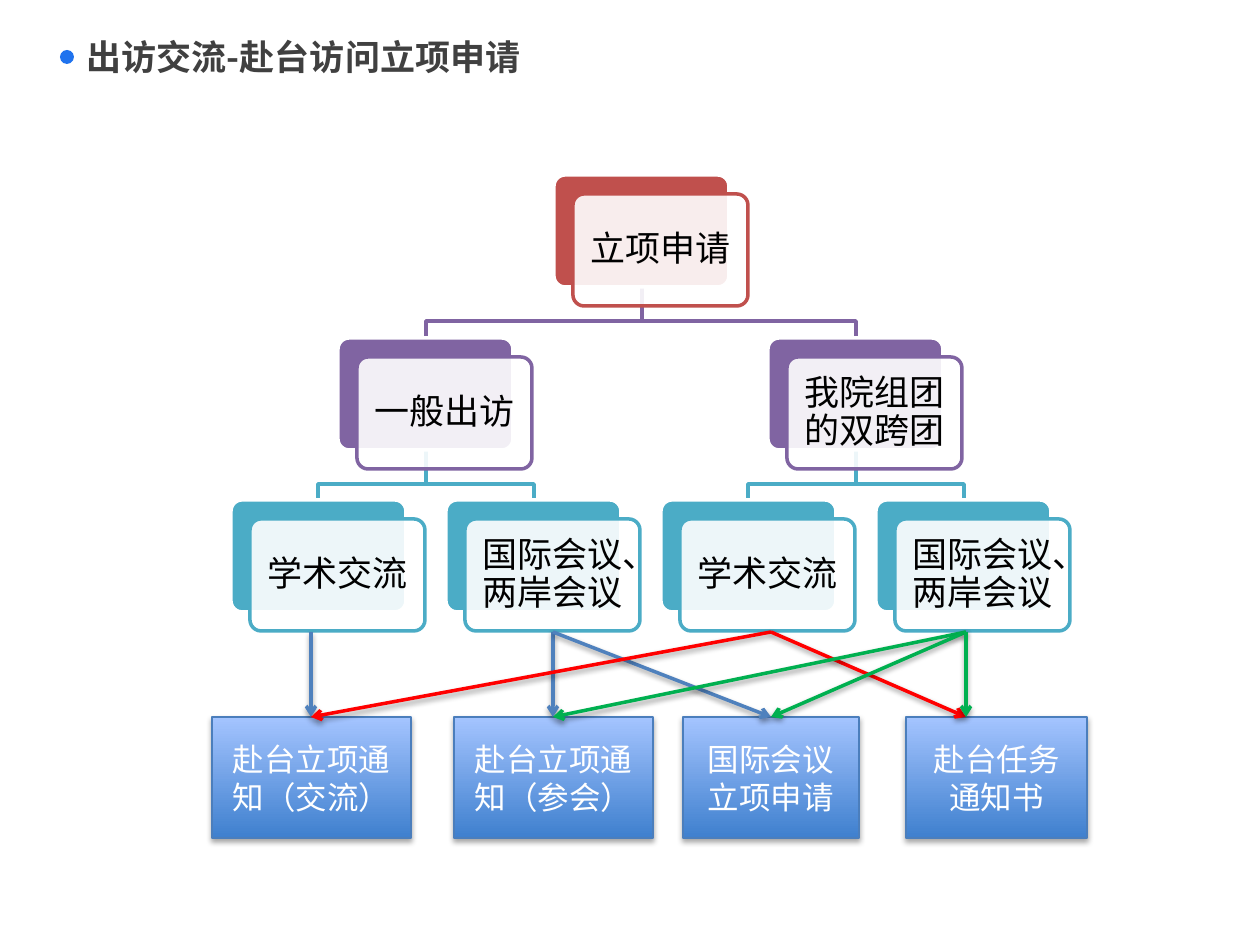
from lxml import etree
from pptx import Presentation
from pptx import util as u
from pptx.dml.color import RGBColor
from pptx.enum import shapes, text
from pptx.oxml.ns import qn

PX = 914400 / 126

WHITE = RGBColor(0xFF, 0xFF, 0xFF)
BLACK = RGBColor(0x00, 0x00, 0x00)
GREY = RGBColor(0x40, 0x40, 0x40)
DOT_BLUE = RGBColor(0x20, 0x73, 0xEE)
BRICK = RGBColor(0xC0, 0x50, 0x4D)
PURPLE = RGBColor(0x80, 0x64, 0xA2)
TEAL = RGBColor(0x4B, 0xAC, 0xC6)
BOX_DARK = RGBColor(0x3F, 0x80, 0xCE)
BOX_LIGHT = RGBColor(0xA4, 0xC4, 0xFF)
BOX_EDGE = RGBColor(0x4B, 0x7E, 0xBC)
BLUE = RGBColor(0x4F, 0x81, 0xBD)
RED = RGBColor(0xFF, 0x00, 0x00)
GREEN = RGBColor(0x00, 0xB0, 0x50)

LATIN, CJK = "Calibri", "Noto Sans CJK SC"

# Tree grid: leaf columns, one colour and one top per level
CARD_W, CARD_H, CARD_SHIFT = 175, 112, 19
FIRST_LEFT, COLUMN = 231, 215
LEVEL_TOPS = (175, 338, 500)
LEVEL_COLOURS = (BRICK, PURPLE, TEAL)

# (label, column, children)
TREE = ("立项申请", 1.5, [
    ("一般出访", 0.5, [("学术交流", 0, []), ("国际会议、两岸会议", 1, [])]),
    ("我院组团的双跨团", 2.5, [("学术交流", 2, []), ("国际会议、两岸会议", 3, [])]),
])

# (label, left, width)
DOCUMENTS = [
    ("赴台立项通知（交流）", 212, 199),
    ("赴台立项通知（参会）", 454, 199),
    ("国际会议立项申请", 683, 176),
    ("赴台任务通知书", 906, 181),
]
DOCUMENT_TOP, DOCUMENT_H = 717, 121

# Arrow columns, and (from, to, colour) between them
ARROW_X = (311, 553, 771, 966)
ARROW_TOP = 632
ARROWS = [
    (0, 0, BLUE), (1, 1, BLUE), (1, 2, BLUE),
    (2, 0, RED), (2, 3, RED),
    (3, 1, GREEN), (3, 2, GREEN), (3, 3, GREEN),
]


def px(*lengths):
    return [u.Emu(round(length * PX)) for length in lengths]


def write(frame, label, size, colour, latin=LATIN, bold=False,
          align=text.PP_ALIGN.CENTER, spacing=1.0):
    frame.word_wrap = True
    frame.vertical_anchor = text.MSO_ANCHOR.MIDDLE
    para = frame.paragraphs[0]
    para.alignment = align
    para.line_spacing = spacing
    span = para.add_run()
    span.text = label
    span.font.name = latin
    span.font.size = u.Pt(size)
    span.font.bold = bold
    span.font.color.rgb = colour
    etree.SubElement(span.font._element, qn("a:ea"), typeface=CJK)


def add_box(page, kind, left, top, width, height, fill, line=None, weight=2):
    box = page.shapes.add_shape(kind, *px(left, top, width, height))
    box.shadow.inherit = False
    if fill is not None:
        box.fill.solid()
        box.fill.fore_color.rgb = fill
    if line is None:
        box.line.fill.background()
    else:
        box.line.color.rgb = line
        box.line.width = u.Pt(weight)
    return box


def add_shadow(effects, distance, opacity):
    shadow = etree.SubElement(effects, qn("a:outerShdw"), blurRad="40000",
                              dist=str(distance), dir="5400000", rotWithShape="0")
    colour = etree.SubElement(shadow, qn("a:srgbClr"), val="000000")
    etree.SubElement(colour, qn("a:alpha"), val=str(opacity * 1000))


def add_title(page, label):
    title = page.shapes.title
    title.left, title.top, title.width, title.height = px(74, 15, 1120, 84)
    write(title.text_frame, label, 20, GREY, CJK, True, text.PP_ALIGN.LEFT)
    add_box(page, shapes.MSO_SHAPE.OVAL, 60, 50, 14, 14, DOT_BLUE)


def card_left(column):
    return round(FIRST_LEFT + COLUMN * column)


def add_branches(page, node, level=0):
    _, column, children = node
    parent_x = card_left(column) + CARD_W / 2
    bottom = LEVEL_TOPS[level] + CARD_H
    for child in children:
        add_branches(page, child, level + 1)
        child_x = card_left(child[1]) + CARD_W / 2
        builder = page.shapes.build_freeform(parent_x, bottom, scale=PX)
        builder.add_line_segments(
            [(parent_x, bottom + 34), (child_x, bottom + 34),
             (child_x, LEVEL_TOPS[level + 1])], close=False)
        branch = builder.convert_to_shape()
        branch.shadow.inherit = False
        branch.fill.background()
        branch.line.color.rgb = LEVEL_COLOURS[level + 1]
        branch.line.width = u.Pt(2)


def add_cards(page, node, level=0):
    label, column, children = node
    left, top, colour = card_left(column), LEVEL_TOPS[level], LEVEL_COLOURS[level]
    rounded = shapes.MSO_SHAPE.ROUNDED_RECTANGLE
    back = add_box(page, rounded, left, top, CARD_W, CARD_H, colour, WHITE)
    front = add_box(page, rounded, left + CARD_SHIFT, top + CARD_SHIFT,
                    CARD_W, CARD_H, WHITE, colour)
    for card in (back, front):
        card.adjustments[0] = 0.1
    white = front._element.spPr.find(qn("a:solidFill"))[0]
    etree.SubElement(white, qn("a:alpha"), val="90000")
    frame = front.text_frame
    (frame.margin_left, frame.margin_top,
     frame.margin_right, frame.margin_bottom) = px(10, 10, 10, 10)
    write(frame, label, 20, BLACK, spacing=0.9)
    for child in children:
        add_cards(page, child, level + 1)


def add_document(page, label, left, width):
    box = add_box(page, shapes.MSO_SHAPE.RECTANGLE, left, DOCUMENT_TOP,
                  width, DOCUMENT_H, None, BOX_EDGE, 0.75)
    box.fill.gradient()
    box.fill.gradient_angle = 90
    for stop, place, colour in zip(box.fill.gradient_stops, (0, 1),
                                   (BOX_DARK, BOX_LIGHT)):
        stop.position = place
        stop.color.rgb = colour
    add_shadow(box._element.spPr.find(qn("a:effectLst")), 23000, 35)
    write(box.text_frame, label, 18, WHITE)


def add_arrow(page, start, end, colour):
    arrow = page.shapes.add_connector(
        shapes.MSO_CONNECTOR.STRAIGHT,
        *px(ARROW_X[start], ARROW_TOP, ARROW_X[end], DOCUMENT_TOP))
    arrow.line.color.rgb = colour
    arrow.line.width = u.Pt(2)
    properties = arrow._element.spPr
    etree.SubElement(properties.find(qn("a:ln")), qn("a:tailEnd"), type="arrow")
    add_shadow(etree.SubElement(properties, qn("a:effectLst")), 20000, 38)


def main():
    deck = Presentation()
    deck.slide_width, deck.slide_height = px(1260, 945)
    page = deck.slides.add_slide(deck.slide_layouts[5])
    add_title(page, "出访交流-赴台访问立项申请")

    # Application tree
    add_branches(page, TREE)
    add_cards(page, TREE)

    # Resulting documents and the arrows leading to them
    for document in DOCUMENTS:
        add_document(page, *document)
    for arrow in ARROWS:
        add_arrow(page, *arrow)

    deck.save("out.pptx")


if __name__ == "__main__":
    main()
